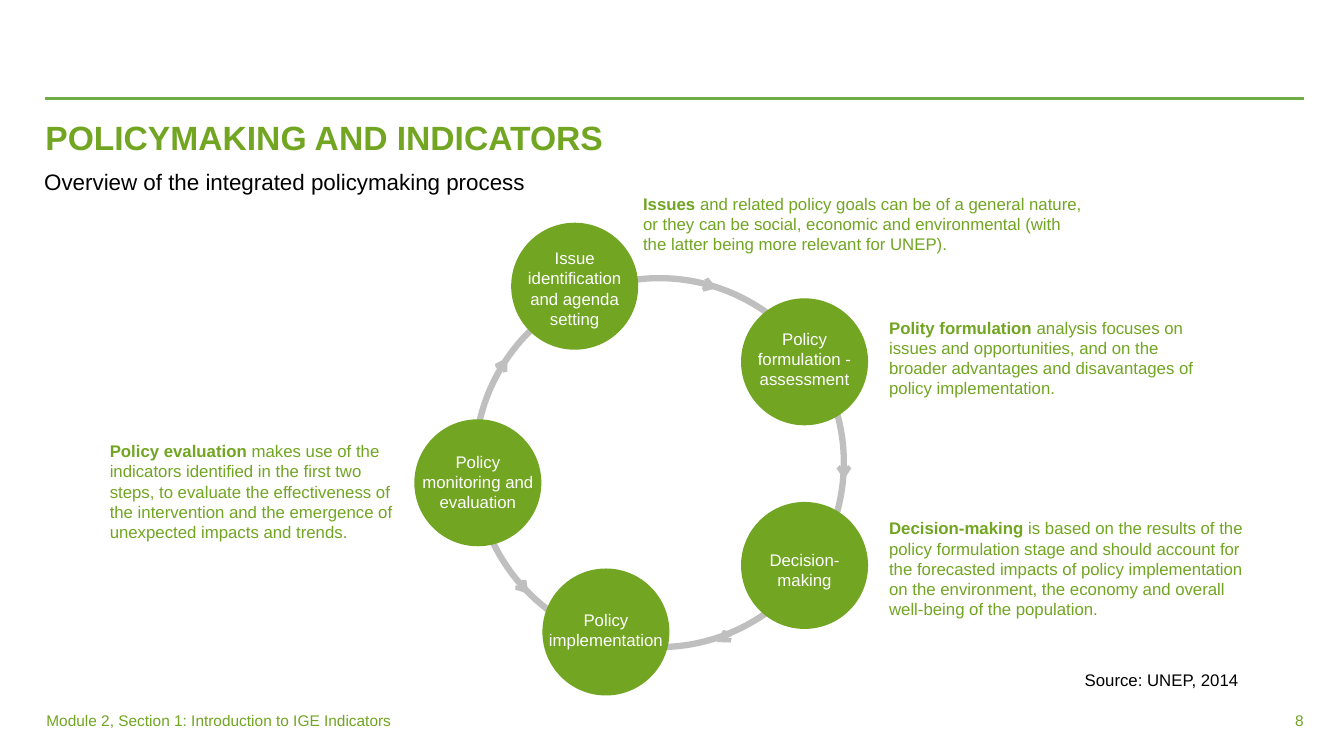
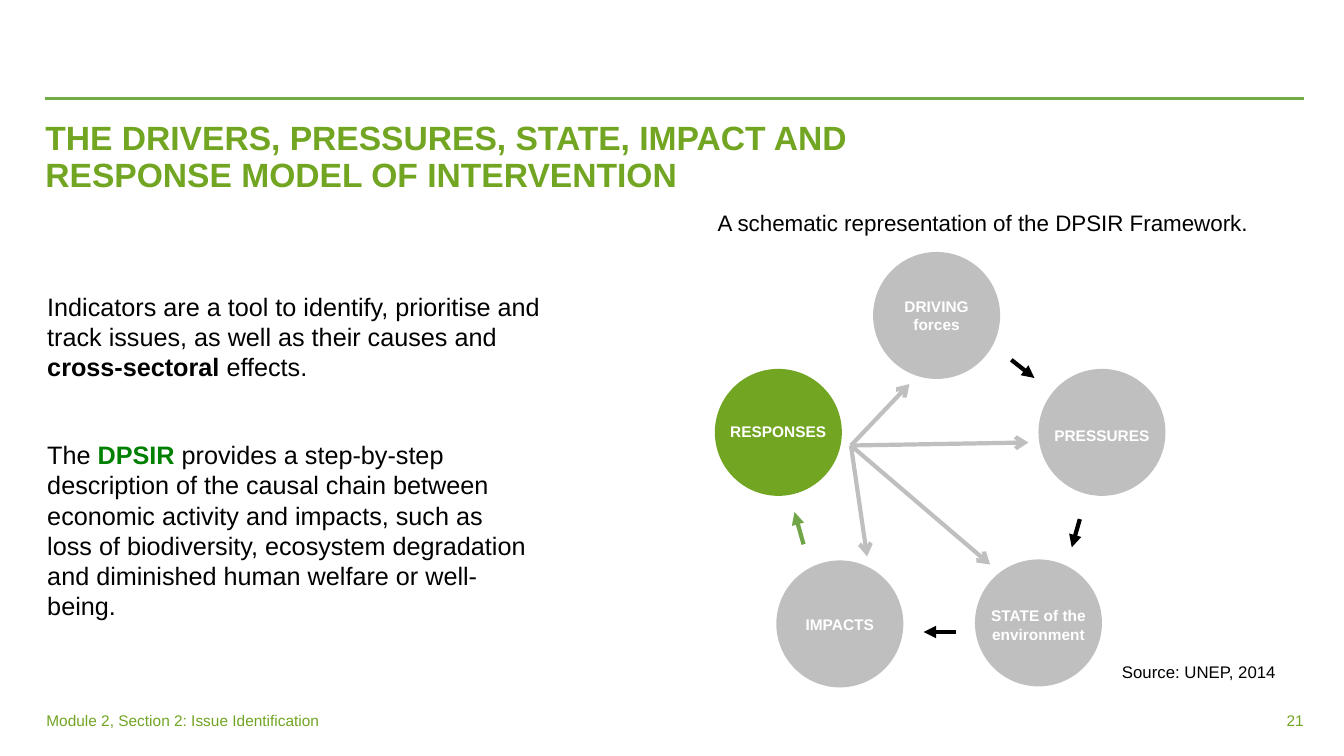
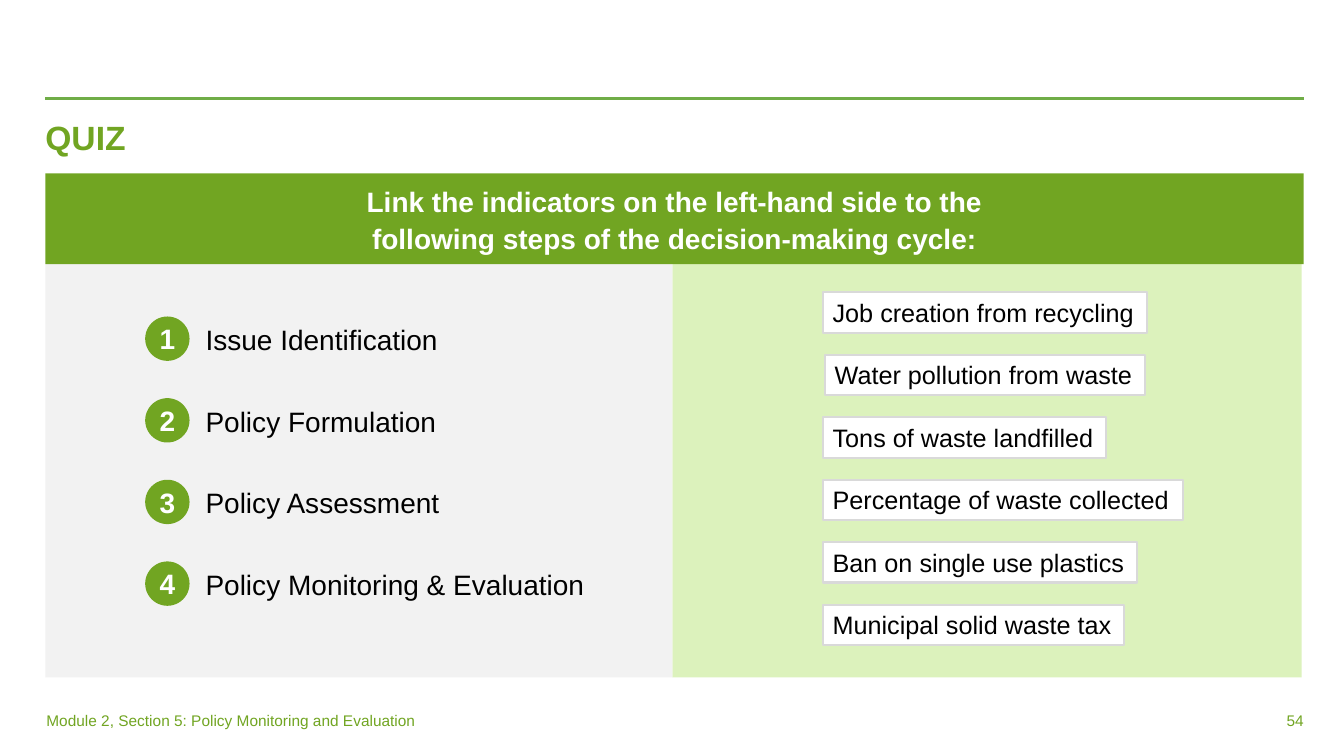
from pptx import Presentation
from pptx.dml.color import RGBColor
from pptx.enum.shapes import MSO_CONNECTOR as Connector, MSO_SHAPE as Shape
from pptx.enum.text import MSO_ANCHOR as Anchor, PP_ALIGN as Align
from pptx.oxml.ns import qn
from pptx.util import Inches, Pt
from lxml.etree import SubElement

COLOURS = {
    "green": "71A522",
    "rule": "70AD47",
    "arrow green": "71A547",
    "deep green": "008000",
    "pale green": "DCF2BC",
    "grey": "BFBFBF",
    "pale grey": "F2F2F2",
    "border": "D9D9D9",
    "black": "000000",
    "white": "FFFFFF",
}
FONT = "Arial"
LEFT, WIDTH = 0.45, 12.48
CIRCLE = 1.26


def colour(name):
    return RGBColor.from_string(COLOURS[name])


class Deck:
    """Holds the shared style and the slide being built."""

    def __init__(self):
        self.presentation = Presentation()
        self.presentation.slide_width = Inches(13.33)
        self.presentation.slide_height = Inches(7.5)
        self.slide = None

    def new_slide(self, title, footer, number, title_width=WIDTH):
        self.slide = self.presentation.slides.add_slide(self.presentation.slide_layouts[6])
        self.line((LEFT, 0.98), (LEFT + WIDTH, 0.98), "rule", 2)
        self.text((LEFT, 1.16, title_width, 1.04), [(title, "green", True)], 24,
                  margins=(0, 0), spacing=0.9)
        self.text((0.46, 6.95, 4.01, 0.4), [(footer, "green", False)], 11,
                  margins=(0, 0.1), anchor=Anchor.MIDDLE)
        self.text((11.82, 6.95, 1.11, 0.4), [(str(number), "green", False)], 11,
                  margins=(0.1, 0), anchor=Anchor.MIDDLE, align=Align.RIGHT)

    def fill_text(self, shape, runs, size, align=Align.LEFT, anchor=Anchor.TOP,
                  margins=(0.1, 0.1), spacing=None, wrap=True):
        frame = shape.text_frame
        frame.word_wrap = wrap
        frame.vertical_anchor = anchor
        frame.margin_left, frame.margin_right = map(Inches, margins)
        frame.margin_top = frame.margin_bottom = Inches(0.05)
        paragraph = frame.paragraphs[0]
        paragraph.alignment = align
        if spacing:
            paragraph.line_spacing = spacing
        for words, shade, bold in runs:
            run = paragraph.add_run()
            run.text = words
            run.font.name = FONT
            run.font.size = Pt(size)
            run.font.bold = bold
            run.font.color.rgb = colour(shade)

    def text(self, box, runs, size, **style):
        shape = self.slide.shapes.add_textbox(*map(Inches, box))
        self.fill_text(shape, runs, size, **style)

    def shape(self, kind, box, fill=None, outline=None, weight=1.5):
        shape = self.slide.shapes.add_shape(kind, *map(Inches, box))
        shape.shadow.inherit = False
        if fill:
            shape.fill.solid()
            shape.fill.fore_color.rgb = colour(fill)
        else:
            shape.fill.background()
        if outline:
            shape.line.color.rgb = colour(outline)
            shape.line.width = Pt(weight)
        else:
            shape.line.fill.background()
        return shape

    def line(self, start, end, shade, weight=3, head=None):
        connector = self.slide.shapes.add_connector(
            Connector.STRAIGHT, *map(Inches, start + end))
        connector.line.color.rgb = colour(shade)
        connector.line.width = Pt(weight)
        if head:
            SubElement(connector.get_or_add_ln(), qn("a:tailEnd"), type=head)
        SubElement(connector.element.spPr, qn("a:effectLst"))

    def circle(self, left, top, label, label_middle, fill="green", size=12,
               bold=False, label_width=1.37):
        self.shape(Shape.OVAL, (left, top, CIRCLE, CIRCLE), fill)
        label_left = left + (CIRCLE - label_width) / 2
        self.text((label_left, label_middle - 0.45, label_width, 0.9),
                  [(label, "white", bold)], size, align=Align.CENTER, anchor=Anchor.MIDDLE)

    def caption(self, box, words, size):
        self.text(box, [(words, "black", False)], size, wrap=False)


def policy_cycle(deck):
    deck.new_slide("POLICYMAKING AND INDICATORS",
                   "Module 2, Section 1: Introduction to IGE Indicators", 8)
    deck.caption((0.34, 1.62, 5.09, 0.37), "Overview of the integrated policymaking process", 16)
    deck.caption((10.66, 6.6, 1.74, 0.3), "Source: UNEP, 2014", 12)
    deck.shape(Shape.OVAL, (4.71, 2.76, 3.66, 3.66), outline="grey", weight=4.5)
    for start, end in [
        ((4.94, 3.7), (5.03, 3.55)),
        ((6.93, 2.8), (7.11, 2.86)),
        ((8.37, 4.59), (8.37, 4.76)),
        ((7.33, 6.24), (7.11, 6.37)),
        ((5.07, 5.69), (5.24, 5.89)),
    ]:
        deck.line(start, end, "grey", head="arrow")
    for left, top, label, middle in [
        (5.07, 2.21, "Issue identification and agenda setting", 2.86),
        (7.35, 2.96, "Policy formulation - assessment", 3.56),
        (7.35, 4.98, "Decision-making", 5.65),
        (5.38, 5.64, "Policy implementation", 6.25),
        (4.11, 4.16, "Policy monitoring and evaluation", 4.78),
    ]:
        deck.circle(left, top, label, middle)
    for box, term, explanation in [
        ((6.28, 1.7, 4.58, 1.04), "Issues ",
         "and related policy goals can be of a general nature, or they can be social, "
         "economic and environmental (with the latter being more relevant for UNEP)."),
        ((8.72, 3.03, 3.48, 1.04), "Polity formulation ",
         "analysis focuses on issues and opportunities, and on the broader advantages "
         "and disavantages of policy implementation."),
        ((8.72, 5.12, 3.87, 1.04), "Decision-making ",
         "is based on the results of the policy formulation stage and should account for "
         "the forecasted impacts of policy implementation on the environment, the economy "
         "and overall well-being of the population."),
        ((0.99, 4.22, 3.08, 1.31), "Policy evaluation ",
         "makes use of the indicators identified in the first two steps, to evaluate the "
         "effectiveness of the intervention and the emergence of unexpected impacts and trends."),
    ]:
        deck.text(box, [(term, "green", True), (explanation, "green", False)], 12,
                  anchor=Anchor.MIDDLE)


def dpsir_model(deck):
    deck.new_slide("THE DRIVERS, PRESSURES, STATE, IMPACT AND RESPONSE MODEL OF INTERVENTION",
                   "Module 2, Section 2: Issue Identification", 21, title_width=9.31)
    deck.text((0.37, 2.84, 5.21, 1.01), [
        ("Indicators are a tool to identify, prioritise and track issues, as well as "
         "their causes and ", "black", False),
        ("cross-sectoral ", "black", True),
        ("effects.", "black", False),
    ], 18)
    deck.text((0.37, 4.31, 4.98, 1.92), [
        ("The ", "black", False),
        ("DPSIR ", "deep green", True),
        ("provides a step-by-step description of the causal chain between economic "
         "activity and impacts, such as loss of biodiversity, ecosystem degradation and "
         "diminished human welfare or well-being.", "black", False),
    ], 18)
    deck.caption((7.02, 2.03, 5.53, 0.37), "A schematic representation of the DPSIR Framework.", 16)
    deck.caption((11.03, 6.52, 1.74, 0.3), "Source: UNEP, 2014", 12)
    for target in [(9.02, 3.81), (10.2, 4.39), (9.82, 5.6), (8.6, 5.52)]:
        deck.line((8.44, 4.42), target, "grey", head="arrow")
    for left, top, label, middle, fill in [
        (7.09, 3.66, "RESPONSES", 4.28, "green"),
        (8.66, 2.5, "DRIVING forces", 3.13, "grey"),
        (10.3, 3.66, "PRESSURES", 4.32, "grey"),
        (9.67, 5.55, "STATE of the environment", 6.2, "grey"),
        (7.7, 5.56, "IMPACTS", 6.19, "grey"),
    ]:
        deck.circle(left, top, label, middle, fill, 11, True, CIRCLE)
    for start, end, shade in [
        ((10.03, 3.57), (10.26, 3.75), "black"),
        ((10.71, 5.15), (10.63, 5.43), "black"),
        ((9.48, 6.27), (9.16, 6.27), "black"),
        ((7.97, 5.4), (7.88, 5.08), "arrow green"),
    ]:
        deck.line(start, end, shade, head="triangle")


def quiz(deck):
    deck.new_slide("QUIZ", "Module 2, Section 5: Policy Monitoring and Evaluation", 54)
    deck.shape(Shape.RECTANGLE, (6.67, 2.62, 6.24, 4.1), "pale green")
    deck.shape(Shape.RECTANGLE, (LEFT, 2.62, 6.22, 4.1), "pale grey")
    deck.shape(Shape.RECTANGLE, (LEFT, 1.72, WIDTH, 0.9), "green")
    deck.text((3.5, 1.75, 6.38, 0.95), [
        ("Link the indicators on the left-hand side to the following steps of the "
         "decision-making cycle:", "white", True),
    ], 20, align=Align.CENTER, margins=(0, 0), spacing=1.1)
    steps = ["Issue Identification", "Policy Formulation", "Policy Assessment",
             "Policy Monitoring & Evaluation"]
    for index, step in enumerate(steps):
        top = 3.14 + 0.81 * index
        badge = deck.shape(Shape.OVAL, (1.44, top, 0.44, 0.44), "green")
        deck.fill_text(badge, [(str(index + 1), "white", True)], 20, align=Align.CENTER,
                       anchor=Anchor.MIDDLE, margins=(0, 0), wrap=False)
        deck.text((1.94, top + 0.01, 4.83, 0.44), [(step, "black", False)], 20)
    indicators = [
        ("Job creation from recycling", 8.16, 3.22),
        ("Water pollution from waste", 8.18, 3.18),
        ("Tons of waste landfilled", 8.16, 2.81),
        ("Percentage of waste collected", 8.16, 3.57),
        ("Ban on single use plastics", 8.16, 3.12),
        ("Municipal solid waste tax", 8.16, 2.99),
    ]
    for index, (indicator, left, width) in enumerate(indicators):
        tag = deck.shape(Shape.RECTANGLE, (left, 2.9 + 0.62 * index, width, 0.4),
                         "white", "border")
        deck.fill_text(tag, [(indicator, "black", False)], 18, wrap=False)


def main():
    deck = Deck()
    policy_cycle(deck)
    dpsir_model(deck)
    quiz(deck)
    deck.presentation.save("out.pptx")


if __name__ == "__main__":
    main()
